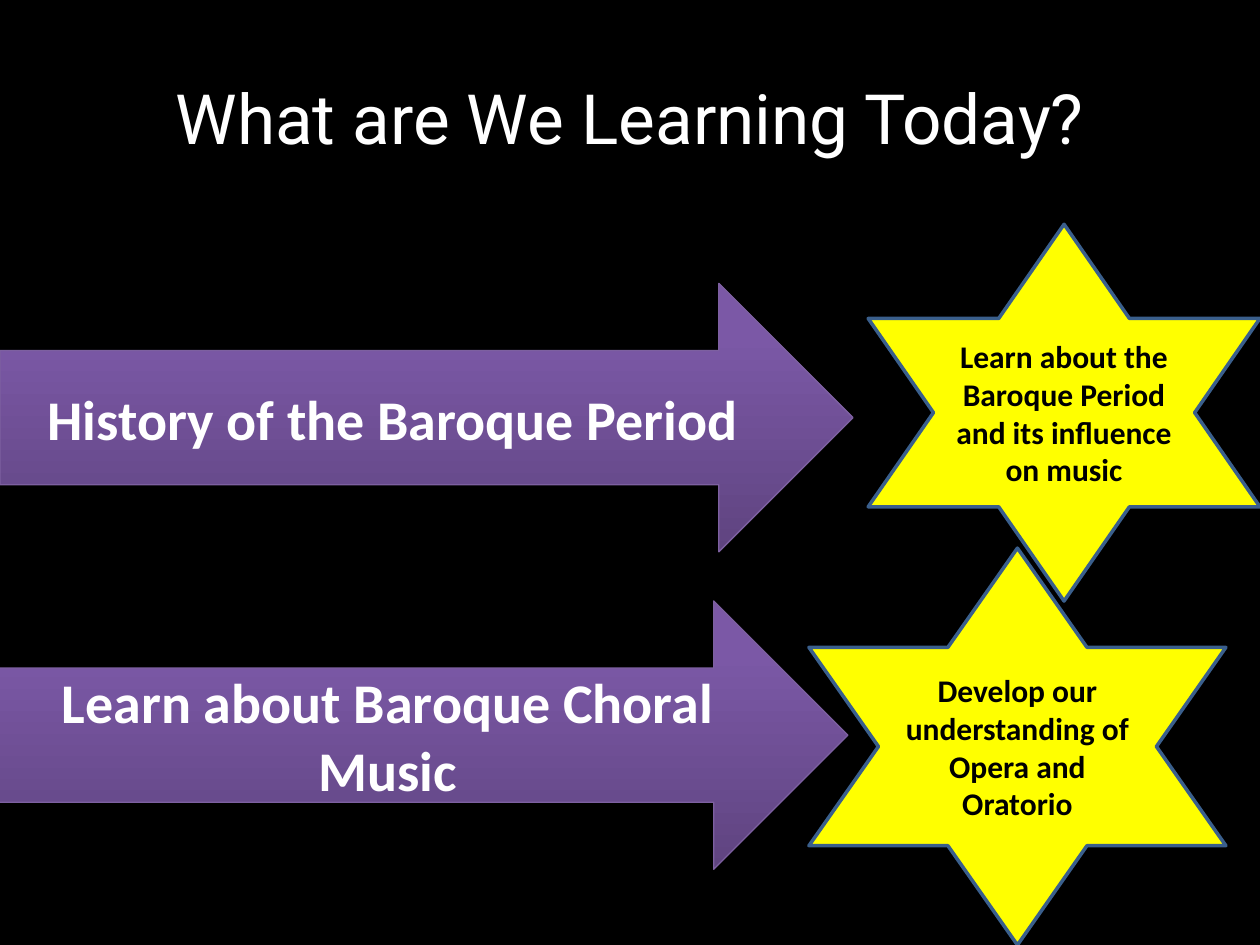
from pptx import Presentation
from pptx.dml.color import RGBColor
from pptx.enum.shapes import MSO_SHAPE
from pptx.enum.text import MSO_ANCHOR, PP_ALIGN
from pptx.util import Inches, Pt

COLORS = {
    "background": "000000",
    "title": "FFFFFF",
    "arrow_text": "FFFFFF",
    "arrow_dark": "5F4480",
    "arrow_light": "7B58A6",
    "arrow_line": "7D60A0",
    "star": "FFFF00",
    "star_line": "3A5F8C",
    "star_text": "000000",
}


def color(name):
    return RGBColor.from_string(COLORS[name])


class LessonSlide:
    """Holds the page being built and the style of its elements."""

    def __init__(self, deck):
        self.page = deck.slides.add_slide(deck.slide_layouts[6])
        background = self.page.background.fill
        background.solid()
        background.fore_color.rgb = color("background")

    def set_text(self, shape, text, font_name, size, text_color, bold=False):
        frame = shape.text_frame
        frame.word_wrap = True
        frame.vertical_anchor = MSO_ANCHOR.MIDDLE
        paragraph = frame.paragraphs[0]
        paragraph.text = text
        paragraph.alignment = PP_ALIGN.CENTER
        font = paragraph.font
        font.name = font_name
        font.size = Pt(size)
        font.bold = bold
        font.color.rgb = color(text_color)

    def outlined_shape(self, kind, bounds, line_color, line_width):
        shape = self.page.shapes.add_shape(kind, *map(Inches, bounds))
        shape.shadow.inherit = False
        shape.line.color.rgb = color(line_color)
        shape.line.width = Pt(line_width)
        return shape

    def title(self, text, bounds):
        box = self.page.shapes.add_textbox(*map(Inches, bounds))
        self.set_text(box, text, "Roboto", 39.6, "title")

    def arrow(self, text, bounds):
        arrow = self.outlined_shape(MSO_SHAPE.RIGHT_ARROW, bounds, "arrow_line", 0.75)
        arrow.fill.gradient()
        arrow.fill.gradient_angle = 90
        bottom, top = arrow.fill.gradient_stops
        bottom.color.rgb = color("arrow_dark")
        bottom.position = 0
        top.color.rgb = color("arrow_light")
        top.position = 0.8
        self.set_text(arrow, text, "Calibri", 32, "arrow_text", bold=True)

    def star(self, text, bounds):
        star = self.outlined_shape(MSO_SHAPE.STAR_6_POINT, bounds, "star_line", 2)
        star.fill.solid()
        star.fill.fore_color.rgb = color("star")
        self.set_text(star, text, "Calibri", 18, "star_text", bold=True)


def main():
    deck = Presentation()
    deck.slide_width = Inches(10)
    deck.slide_height = Inches(7.5)

    slide = LessonSlide(deck)
    slide.title("What are We Learning Today?", (0.5, 0.3, 9, 1.25))
    slide.arrow("History of the Baroque Period", (0, 2.25, 6.77, 2.13))
    slide.star("Learn about the Baroque Period and its influence on music",
               (6.89, 1.78, 3.11, 2.99))
    slide.arrow("Learn about Baroque Choral Music", (-0.04, 4.77, 6.77, 2.13))
    slide.star("Develop our understanding of Opera and Oratorio",
               (6.42, 4.35, 3.31, 3.15))

    deck.save("out.pptx")


if __name__ == "__main__":
    main()
